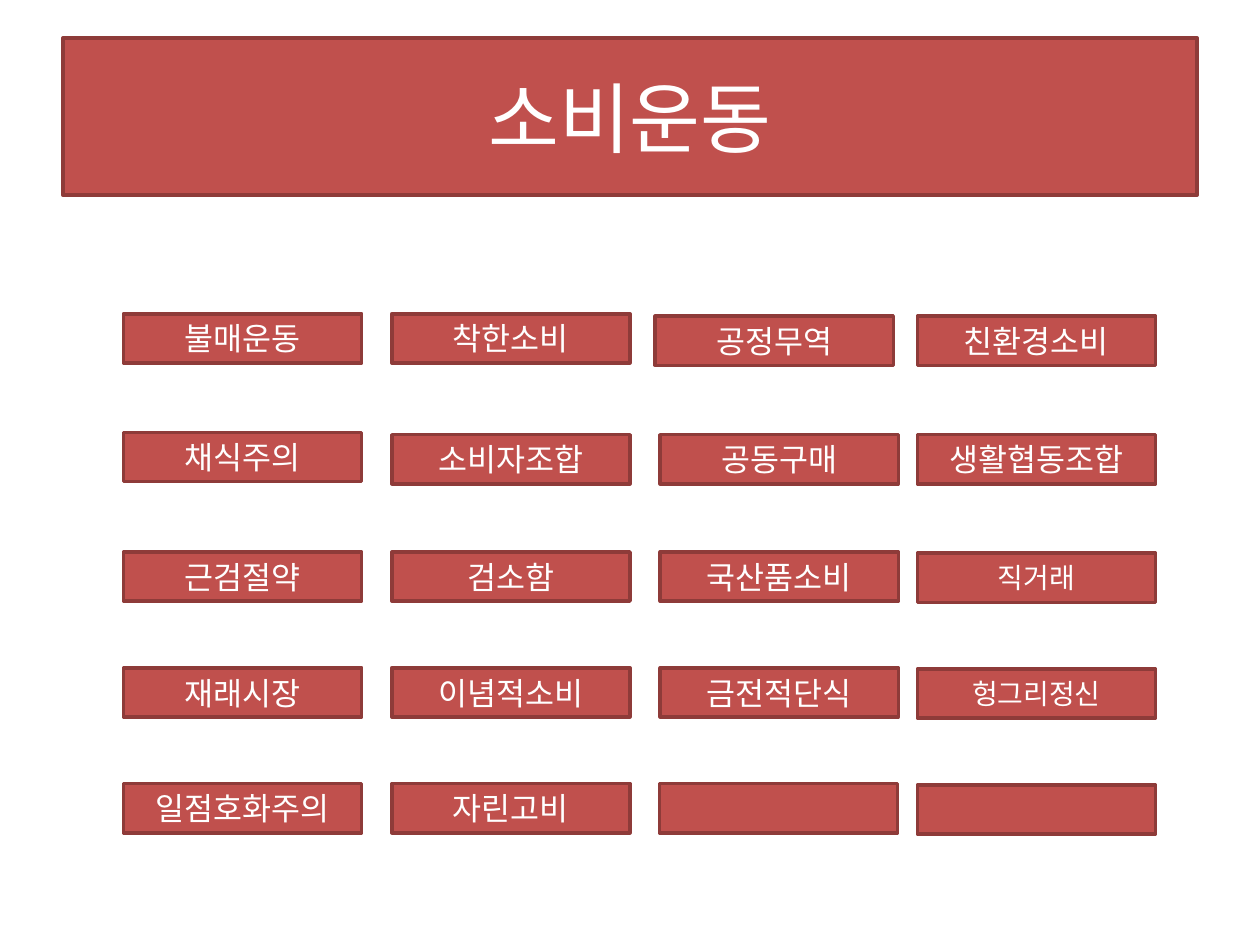
from dataclasses import dataclass

from lxml import etree
from pptx import Presentation
from pptx import util as u
from pptx.dml.color import RGBColor
from pptx.enum import shapes, text
from pptx.oxml.ns import qn


@dataclass(frozen=True)
class Theme:
    fill: str = "C0504D"
    line: str = "8E3B39"
    ink: str = "FFFFFF"
    font: str = "Noto Sans CJK KR"
    border: float = 2
    title: int = 44
    label: int = 18
    small: int = 16


class SlideBuilder:
    def __init__(self, deck, theme):
        self.theme = theme
        self.page = deck.slides.add_slide(deck.slide_layouts[6])

    def set_values(self, target, values):
        for name, value in values.items():
            setattr(target, name, value)

    def box(self, left, top, width, height, words, size):
        box = self.page.shapes.add_shape(
            shapes.MSO_SHAPE.RECTANGLE, *map(u.Pt, (left, top, width, height)))
        box.shadow.inherit = False
        box.fill.solid()
        box.fill.fore_color.rgb = RGBColor.from_string(self.theme.fill)
        box.line.color.rgb = RGBColor.from_string(self.theme.line)
        box.line.width = u.Pt(self.theme.border)
        if words:
            self.caption(box, words, size)

    def caption(self, box, words, size):
        self.set_values(box.text_frame, {
            "word_wrap": True, "vertical_anchor": text.MSO_ANCHOR.MIDDLE})
        para = box.text_frame.paragraphs[0]
        para.alignment = text.PP_ALIGN.CENTER
        span = para.add_run()
        span.text = words
        self.set_values(span.font, {"size": u.Pt(size), "name": self.theme.font})
        span.font.color.rgb = RGBColor.from_string(self.theme.ink)
        properties = span._r.get_or_add_rPr()
        etree.SubElement(properties, qn("a:ea"), typeface=self.theme.font)


LABELS = [
    ["불매운동", "착한소비", "공정무역", "친환경소비"],
    ["채식주의", "소비자조합", "공동구매", "생활협동조합"],
    ["근검절약", "검소함", "국산품소비", "직거래"],
    ["재래시장", "이념적소비", "금전적단식", "헝그리정신"],
    ["일점호화주의", "자린고비", "", ""],
]
SMALL_LABELS = {"직거래", "헝그리정신"}
COLUMNS = [70.6, 223.9, 377.3, 524.2]
ROWS = [179.3, 248.4, 315.4, 381.6, 447.8]
NUDGES = {
    (0, 2): (-2.9, 1.4), (0, 3): (0, 1.4), (1, 0): (0, -1.4),
    (2, 3): (0, 0.7), (3, 3): (0, 0.7), (4, 2): (-0.5, 0), (4, 3): (0, 0.7),
}


def main():
    deck = Presentation()
    deck.slide_width, deck.slide_height = u.Pt(720), u.Pt(540)
    theme = Theme()
    builder = SlideBuilder(deck, theme)
    builder.box(36, 21.6, 648, 90, "소비운동", theme.title)
    for row, (top, labels) in enumerate(zip(ROWS, LABELS)):
        for column, (left, label) in enumerate(zip(COLUMNS, labels)):
            across, down = NUDGES.get((row, column), (0, 0))
            size = theme.small if label in SMALL_LABELS else theme.label
            builder.box(left + across, top + down, 136.1, 28.1, label, size)
    deck.save("out.pptx")


if __name__ == "__main__":
    main()
